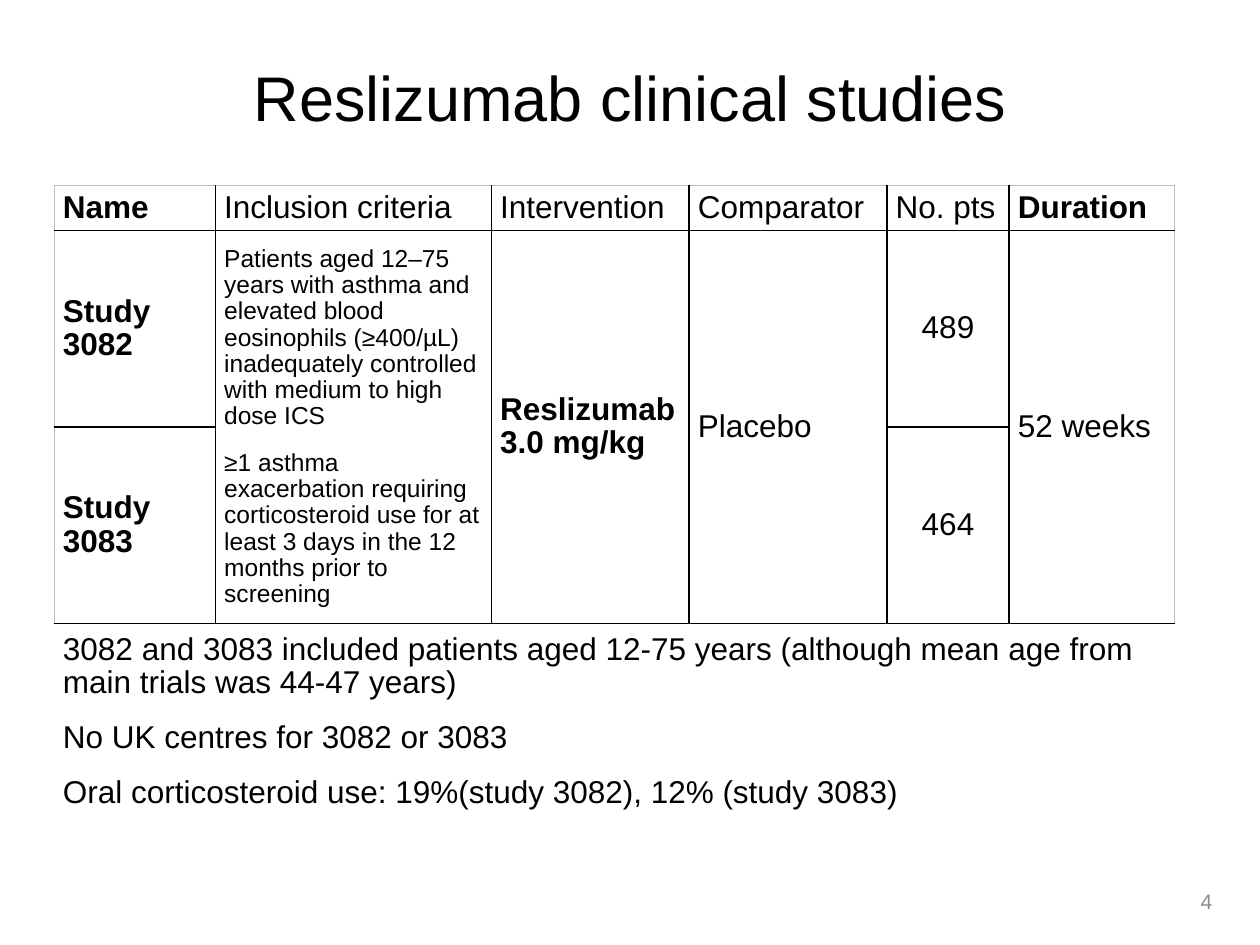
import pptx
import pptx.util
import pptx.dml.color
import pptx.enum.text
import pptx.oxml.ns
import lxml.etree

Inches = pptx.util.Inches
Pt = pptx.util.Pt
RGBColor = pptx.dml.color.RGBColor
Align = pptx.enum.text.PP_ALIGN
Anchor = pptx.enum.text.MSO_ANCHOR

BLACK = RGBColor(0x00, 0x00, 0x00)
WHITE = RGBColor(0xFF, 0xFF, 0xFF)
PALE = RGBColor(0xBF, 0xBF, 0xBF)
GREY = RGBColor(0x8C, 0x8C, 0x8C)

COLS = [1.28, 2.19, 1.57, 1.57, 0.97, 1.31]
ROWS = [0.36, 1.56, 1.56, 1.62]
HEADS = ["Name", "Inclusion criteria", "Intervention",
         "Comparator", "No. pts", "Duration"]
CRITERIA = [
    "Patients aged 12–75 years with asthma and elevated blood eosinophils "
    "(≥400/µL) inadequately controlled with medium to high dose ICS",
    "≥1 asthma exacerbation requiring corticosteroid use for at least 3 days "
    "in the 12 months prior to screening",
]
NOTES = [
    "3082 and 3083 included patients aged 12-75 years (although mean age from "
    "main trials was 44-47 years)",
    "No UK centres for 3082 or 3083",
    "Oral corticosteroid use: 19%(study 3082), 12% (study 3083)",
]
STUDIES = [("Study 3082", "489"), ("Study 3083", "464")]


def add_run(para, text, size, color=BLACK, bold=False):
    run = para.add_run()
    run.text = text
    run.font.name = "Arial"
    run.font.size = Pt(size)
    run.font.bold = bold
    run.font.color.rgb = color


def fill_cell(cell, texts, size=18, bold=False, align=Align.LEFT,
              anchor=Anchor.MIDDLE, pad=0):
    cell.vertical_anchor = anchor
    cell.margin_left = cell.margin_right = Inches(0.07)
    cell.margin_top = cell.margin_bottom = Inches(pad)
    frame = cell.text_frame
    for i, text in enumerate(texts):
        para = frame.add_paragraph() if i else frame.paragraphs[0]
        para.alignment = align
        para.line_spacing = 0.95
        para.space_before = para.space_after = Pt(6)
        add_run(para, text, size, bold=bold)


def set_edge(cell, side, color, width):
    """Draw one cell border; a color of None hides it."""
    qn = pptx.oxml.ns.qn
    props = cell._tc.get_or_add_tcPr()
    line = lxml.etree.SubElement(props, qn("a:ln" + side), w=str(Pt(width)))
    if color is None:
        lxml.etree.SubElement(line, qn("a:noFill"))
    else:
        fill = lxml.etree.SubElement(line, qn("a:solidFill"))
        lxml.etree.SubElement(fill, qn("a:srgbClr"), val=str(color))


def style_grid(table):
    """Black inner rules, a pale outer frame, and an open notes row."""
    inner, outer, none = (BLACK, 1), (PALE, 0.5), (None, 1)
    last_row, last_col = len(ROWS) - 1, len(COLS) - 1
    for r in range(len(ROWS)):
        for c in range(len(COLS)):
            cell = table.cell(r, c)
            notes = r == last_row
            edges = {
                "L": none if notes else inner if c else outer,
                "R": none if notes else inner if c < last_col else outer,
                "T": inner if r else outer,
                "B": none if notes else inner,
            }
            for side, (color, width) in edges.items():
                set_edge(cell, side, color, width)
            cell.fill.solid()
            cell.fill.fore_color.rgb = WHITE


def add_title(slide):
    title = slide.shapes.title
    title.left, title.top = Inches(0.28), Inches(0.26)
    title.width, title.height = Inches(9.44), Inches(1.08)
    title.text_frame.vertical_anchor = Anchor.MIDDLE
    para = title.text_frame.paragraphs[0]
    para.alignment = Align.CENTER
    para.line_spacing = 0.9
    add_run(para, "Reslizumab clinical studies", 36)


def add_studies(slide):
    table = slide.shapes.add_table(
        len(ROWS), len(COLS), Inches(0.43), Inches(1.47),
        Inches(sum(COLS)), Inches(sum(ROWS))).table
    table.first_row = table.horz_banding = False
    for col, width in zip(table.columns, COLS):
        col.width = Inches(width)
    for row, height in zip(table.rows, ROWS):
        row.height = Inches(height)
    style_grid(table)

    for c in (1, 2, 3, 5):
        table.cell(1, c).merge(table.cell(2, c))
    table.cell(3, 0).merge(table.cell(3, 5))

    for c, head in enumerate(HEADS):
        fill_cell(table.cell(0, c), [head], bold=head in ("Name", "Duration"),
                  anchor=Anchor.BOTTOM, pad=0.04)
    for r, (name, count) in enumerate(STUDIES, 1):
        fill_cell(table.cell(r, 0), [name], bold=True)
        fill_cell(table.cell(r, 4), [count], align=Align.CENTER)
    fill_cell(table.cell(1, 1), CRITERIA, size=14, pad=0.04)
    fill_cell(table.cell(1, 2), ["Reslizumab 3.0 mg/kg"], bold=True)
    fill_cell(table.cell(1, 3), ["Placebo"])
    fill_cell(table.cell(1, 5), ["52 weeks"])
    fill_cell(table.cell(3, 0), NOTES, anchor=Anchor.TOP, pad=0.08)


def add_number(slide):
    box = slide.shapes.add_textbox(
        Inches(7.47), Inches(6.95), Inches(2.25), Inches(0.4))
    frame = box.text_frame
    frame.word_wrap = True
    frame.vertical_anchor = Anchor.MIDDLE
    para = frame.paragraphs[0]
    para.alignment = Align.RIGHT
    add_run(para, "4", 12, GREY)


def main():
    deck = pptx.Presentation()
    deck.slide_width, deck.slide_height = Inches(10), Inches(7.5)
    slide = deck.slides.add_slide(deck.slide_layouts[5])
    add_title(slide)
    add_studies(slide)
    add_number(slide)
    deck.save("out.pptx")


if __name__ == "__main__":
    main()
